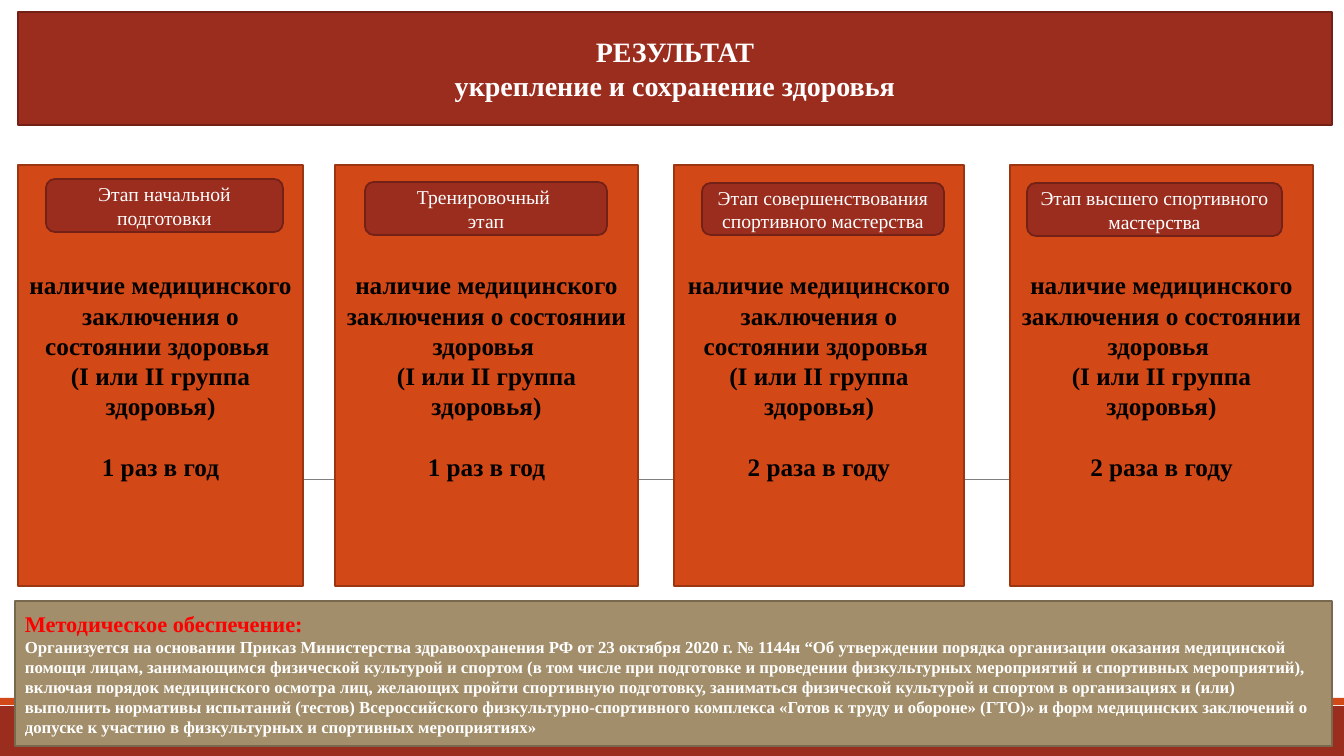
import pptx
import pptx.util
import pptx.dml.color
import pptx.enum.shapes
import pptx.enum.text
import pptx.oxml
import pptx.oxml.ns

RGBColor = pptx.dml.color.RGBColor
MSO_SHAPE = pptx.enum.shapes.MSO_SHAPE
PP_ALIGN = pptx.enum.text.PP_ALIGN

# Content
TITLE = ["РЕЗУЛЬТАТ", "укрепление и сохранение здоровья"]
REQUIREMENT = ["наличие медицинского заключения о состоянии здоровья ",
               "(I или II группа здоровья)"]
# Card left and width, frequency, badge box, badge lines
STAGES = [
    (18, 285, "1 раз в год", (46, 179, 237, 53), ["Этап начальной подготовки"]),
    (335, 303, "1 раз в год", (365, 182, 242, 53), ["Тренировочный ", "этап"]),
    (674, 290, "2 раза в году", (702, 183, 242, 52),
     ["Этап совершенствования спортивного мастерства"]),
    (1010, 303, "2 раза в году", (1027, 183, 255, 53),
     ["Этап высшего спортивного мастерства"]),
]
NOTE_HEADING = "Методическое обеспечение:"
NOTE_TEXT = (
    "Организуется на основании Приказ Министерства здравоохранения РФ от 23 октября "
    "2020 г. № 1144н “Об утверждении порядка организации оказания медицинской помощи "
    "лицам, занимающимся физической культурой и спортом (в том числе при подготовке и "
    "проведении физкультурных мероприятий и спортивных мероприятий), включая порядок "
    "медицинского осмотра лиц, желающих пройти спортивную подготовку, заниматься "
    "физической культурой и спортом в организациях и (или) выполнить нормативы испытаний "
    "(тестов) Всероссийского физкультурно-спортивного комплекса «Готов к труду и обороне» "
    "(ГТО)» и форм медицинских заключений о допуске к участию в физкультурных и "
    "спортивных мероприятиях»")

# Style
FONT = "Times New Roman"
WHITE = RGBColor(0xFF, 0xFF, 0xFF)
BLACK = RGBColor(0, 0, 0)
RED = RGBColor(0xFF, 0, 0)
GRAY = RGBColor(0x80, 0x80, 0x80)
BRICK = RGBColor(0x9B, 0x2D, 0x1F)
BRICK_EDGE = RGBColor(0x73, 0x21, 0x17)
ORANGE = RGBColor(0xD3, 0x48, 0x17)
ORANGE_EDGE = RGBColor(0x9C, 0x35, 0x11)
TAN = RGBColor(0xA2, 0x8E, 0x6A)
TAN_EDGE = RGBColor(0x78, 0x69, 0x4E)

# Layout in px
PX_PER_INCH = 100.8
SLIDE_WIDTH, SLIDE_HEIGHT = 1344, 756
CARD_TOP, CARD_HEIGHT = 165, 421


def px(length):
    return pptx.util.Inches(length / PX_PER_INCH)


def paint(shape, fill, edge=None):
    shape.fill.solid()
    shape.fill.fore_color.rgb = fill
    if edge is None:
        shape.line.fill.background()
    else:
        shape.line.color.rgb = edge
        shape.line.width = pptx.util.Pt(1.25)


def add_box(slide, kind, box, fill, edge=None):
    shape = slide.shapes.add_shape(kind, *map(px, box))
    shape.shadow.inherit = False
    paint(shape, fill, edge)
    return shape


def write(shape, lines, align=PP_ALIGN.CENTER):
    """Each line is (text, size, colour, bold)."""
    frame = shape.text_frame
    frame.word_wrap = True
    frame.auto_size = pptx.enum.text.MSO_AUTO_SIZE.NONE
    frame.vertical_anchor = pptx.enum.text.MSO_ANCHOR.MIDDLE
    frame.text = "\n".join(line[0] for line in lines)
    for paragraph, (_, size, color, bold) in zip(frame.paragraphs, lines):
        paragraph.alignment = align
        paragraph.font.name = FONT
        paragraph.font.size = pptx.util.Pt(size)
        paragraph.font.bold = bold
        paragraph.font.color.rgb = color


def add_title(slide):
    title = slide.shapes.title
    title.left, title.top, title.width, title.height = map(px, (18, 12, 1314, 113))
    geometry = pptx.oxml.parse_xml(
        '<a:prstGeom %s prst="roundRect"><a:avLst/></a:prstGeom>'
        % pptx.oxml.ns.nsdecls("a"))
    title.element.spPr.insert(1, geometry)
    paint(title, BRICK, BRICK_EDGE)
    write(title, [(text, 20, WHITE, True) for text in TITLE])


def add_axis(slide):
    axis = slide.shapes.add_connector(
        pptx.enum.shapes.MSO_CONNECTOR.STRAIGHT, px(133), px(479), px(1222), px(479))
    axis.line.color.rgb = GRAY
    axis.line.width = pptx.util.Pt(0.5)
    axis.element.spPr.append(
        pptx.oxml.parse_xml("<a:effectLst %s/>" % pptx.oxml.ns.nsdecls("a")))


def add_card(slide, left, width, frequency):
    card = add_box(slide, MSO_SHAPE.RECTANGLE, (left, CARD_TOP, width, CARD_HEIGHT),
                   ORANGE, ORANGE_EDGE)
    write(card, [(text, 18, BLACK, True) for text in REQUIREMENT + [frequency]])
    card.text_frame.paragraphs[-1].space_before = pptx.util.Pt(21.5)
    return card


def main():
    presentation = pptx.Presentation()
    presentation.slide_width = px(SLIDE_WIDTH)
    presentation.slide_height = px(SLIDE_HEIGHT)
    slide = presentation.slides.add_slide(presentation.slide_layouts[5])

    # Footer bands, axis and title
    add_box(slide, MSO_SHAPE.RECTANGLE, (0, 706, SLIDE_WIDTH, 50), BRICK)
    add_box(slide, MSO_SHAPE.RECTANGLE, (0, 698, SLIDE_WIDTH, 7), ORANGE)
    add_axis(slide)
    add_title(slide)

    # Stage cards with badges
    for number, (left, width, frequency, badge_box, badge_lines) in enumerate(STAGES):
        card = add_card(slide, left, width, frequency)
        if number == 0:  # the narrowest card has tighter margins
            frame = card.text_frame
            frame.margin_left = frame.margin_right = px(4)
            frame.margin_top = frame.margin_bottom = 0
        badge = add_box(slide, MSO_SHAPE.ROUNDED_RECTANGLE, badge_box, BRICK, BRICK_EDGE)
        write(badge, [(text, 14, WHITE, False) for text in badge_lines])

    # Regulatory note
    note = add_box(slide, MSO_SHAPE.RECTANGLE, (15, 601, 1317, 145), TAN, TAN_EDGE)
    write(note, [(NOTE_HEADING, 16, RED, True), (NOTE_TEXT, 12, WHITE, True)],
          PP_ALIGN.LEFT)

    presentation.save("out.pptx")


if __name__ == "__main__":
    main()
